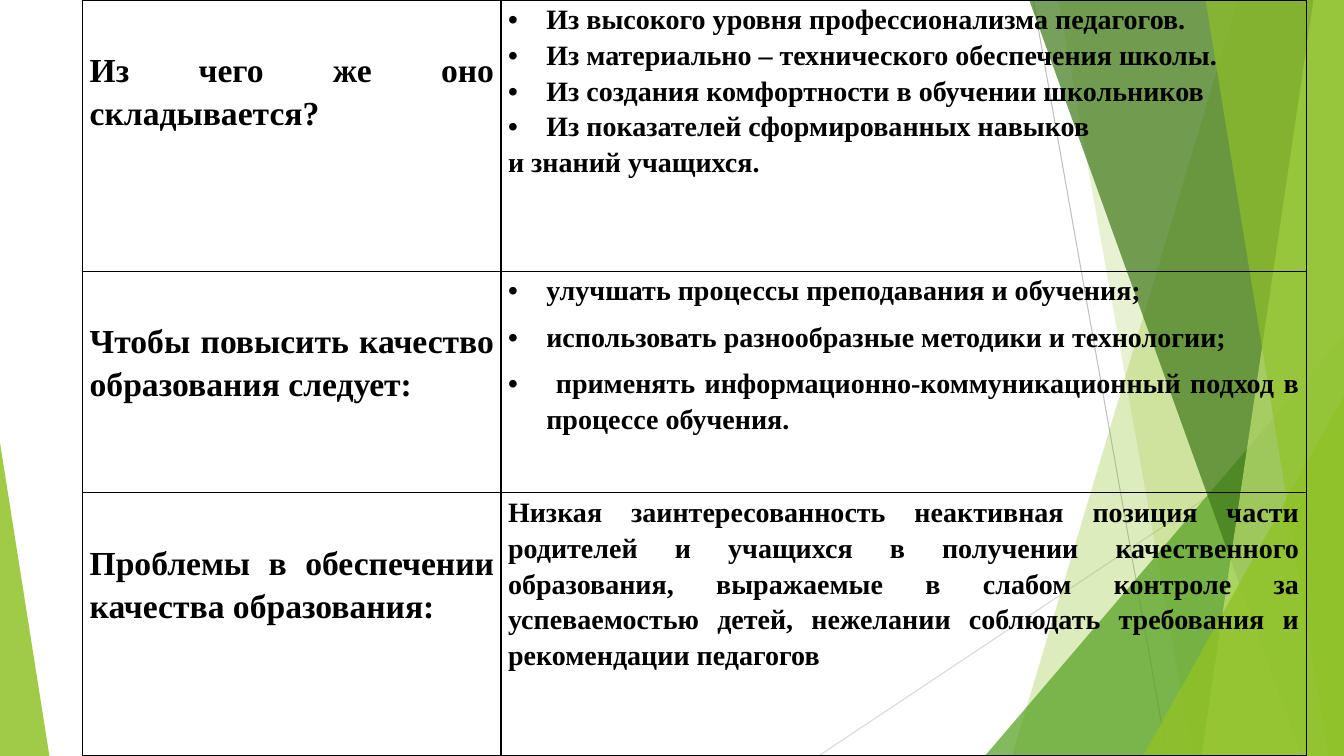
"""Build a slide with a three-row table on school education quality over a faceted green backdrop."""
import dataclasses

import pptx
import pptx.dml.color
import pptx.enum.dml
import pptx.enum.shapes
import pptx.enum.text
import pptx.oxml
import pptx.oxml.ns
import pptx.util

WIDTH = pptx.util.Inches(13.333)
HEIGHT = pptx.util.Inches(7.5)
JUSTIFY = pptx.enum.text.PP_ALIGN.JUSTIFY
LEFT = pptx.enum.text.PP_ALIGN.LEFT


@dataclasses.dataclass(frozen=True)
class Theme:
    """Colours, font and type sizes of the slide."""
    font: str = "Times New Roman"
    text: str = "000000"
    question_size: int = 24
    answer_size: int = 20
    lime: str = "90C226"
    pale: str = "C0E474"
    green: str = "54A021"
    dark: str = "3F7819"
    rule_dark: str = "BFBFBF"
    rule_light: str = "D9D9D9"
    rule_width: float = 0.75
    border_width: float = 1


THEME = Theme()

RULES = [
    ((76.88, 0), (86.85, 100), THEME.rule_dark),
    ((100, 53.73), (60.9, 100), THEME.rule_light),
]
COLUMNS = (31.13, 59.92)
ROWS = (35.87, 29.33, 34.8)
TABLE_LEFT = 6.15

QUESTIONS = [
    "Из чего же оно складывается?",
    "Чтобы повысить качество образования следует:",
    "Проблемы в обеспечении качества образования:",
]
COMPONENTS = [
    "Из высокого уровня профессионализма педагогов.",
    "Из материально – технического обеспечения школы.",
    "Из создания комфортности в обучении школьников",
    "Из показателей сформированных навыков",
]
MEASURES = [
    "улучшать процессы преподавания и обучения;",
    "использовать разнообразные методики и технологии;",
    " применять информационно-коммуникационный подход в процессе обучения.",
]
PROBLEM = (
    "Низкая заинтересованность неактивная позиция части родителей и учащихся "
    "в получении качественного образования, выражаемые в слабом контроле за "
    "успеваемостью детей, нежелании соблюдать требования и рекомендации педагогов"
)


def across(percent):
    """Turn a percentage of the slide width into a length."""
    return round(WIDTH * percent / 100)


def down(percent):
    """Turn a percentage of the slide height into a length."""
    return round(HEIGHT * percent / 100)


def apply_format(target, values):
    """Set each attribute of the target from a dict of format values."""
    for name, value in values.items():
        setattr(target, name, value)


def colour(code):
    """Make a colour from its hexadecimal code."""
    return pptx.dml.color.RGBColor.from_string(code)


def xml_element(markup):
    """Parse drawing markup that uses the a: prefix."""
    namespace = pptx.oxml.ns.nsdecls("a")
    return pptx.oxml.parse_xml(markup.replace(" ", f" {namespace} ", 1))


def add_rule(slide, start, end, code):
    """Draw a thin backdrop line between two points."""
    line = slide.shapes.add_connector(
        pptx.enum.shapes.MSO_CONNECTOR.STRAIGHT,
        across(start[0]), down(start[1]), across(end[0]), down(end[1]))
    line.line.color.rgb = colour(code)
    line.line.width = pptx.util.Pt(THEME.rule_width)
    line._element.spPr.append(xml_element("<a:effectLst />"))


def paint(shape, code, opacity):
    """Fill a backdrop shape with a translucent colour and no outline."""
    shape.shadow.inherit = False
    shape.fill.solid()
    shape.fill.fore_color.rgb = colour(code)
    shape.line.fill.background()
    fill = shape._element.spPr.find(pptx.oxml.ns.qn("a:solidFill"))
    fill[0].append(xml_element(f'<a:alpha val="{opacity * 1000}"/>'))


def add_facet(slide, top, bottom, code, opacity):
    """Draw a band from a slanted left edge to the right edge of the slide."""
    builder = slide.shapes.build_freeform(across(top), 0)
    builder.add_line_segments(
        [(WIDTH, 0), (WIDTH, HEIGHT), (across(bottom), HEIGHT)], close=True)
    paint(builder.convert_to_shape(), code, opacity)


def add_corner(slide, left, top, width, apex, code, opacity):
    """Draw a right triangle standing on the bottom edge of the slide."""
    corner = slide.shapes.add_shape(
        pptx.enum.shapes.MSO_SHAPE.ISOSCELES_TRIANGLE,
        across(left), down(top), across(width), down(100 - top))
    corner.adjustments[0] = apex
    paint(corner, code, opacity)


def add_backdrop(slide):
    """Draw the backdrop from back to front."""
    for rule in RULES:
        add_rule(slide, *rule)
    add_facet(slide, 92.1, 75.3, THEME.lime, 30)
    add_facet(slide, 78.75, 88.73, THEME.lime, 20)
    add_corner(slide, 73.28, 44.4, 26.72, 1, THEME.green, 72)
    add_facet(slide, 76.58, 96.83, THEME.dark, 70)
    add_facet(slide, 97.73, 89.4, THEME.pale, 70)
    add_facet(slide, 89.7, 98.85, THEME.lime, 65)
    add_corner(slide, 85.05, 52.4, 14.95, 1, THEME.lime, 80)
    add_corner(slide, 0, 58.53, 3.68, 0, THEME.lime, 85)


def add_bullet(paragraph):
    """Give a paragraph a hanging round bullet."""
    indent = pptx.util.Inches(0.38)
    properties = paragraph._p.get_or_add_pPr()
    properties.set("marL", str(indent))
    properties.set("indent", str(-indent))
    properties.append(xml_element('<a:buFont typeface="Arial"/>'))
    properties.append(xml_element('<a:buChar char="•"/>'))


def frame_cell(cell, top_margin):
    """Set the borders, margins and empty fill of a cell."""
    width = pptx.util.Pt(THEME.border_width)
    properties = cell._tc.get_or_add_tcPr()
    for side in "LRTB":
        properties.append(xml_element(
            f'<a:ln{side} w="{width}"><a:solidFill><a:srgbClr val="{THEME.text}"/>'
            f"</a:solidFill></a:ln{side}>"))
    cell.fill.background()
    side_margin = pptx.util.Inches(0.07)
    apply_format(cell, {
        "margin_left": side_margin, "margin_right": side_margin,
        "margin_top": top_margin, "margin_bottom": 0,
        "vertical_anchor": pptx.enum.text.MSO_ANCHOR.TOP})


def write_cell(cell, texts, size, bullets=0, alignment=JUSTIFY, gap=7.5, top_margin=0):
    """Write paragraphs into a cell, with bullets on the first ones."""
    frame_cell(cell, top_margin)
    for index, text in enumerate(texts):
        frame = cell.text_frame
        paragraph = frame.add_paragraph() if index else frame.paragraphs[0]
        apply_format(paragraph, {
            "alignment": alignment, "line_spacing": 1.15,
            "space_after": pptx.util.Pt(gap)})
        if index < bullets:
            add_bullet(paragraph)
        run = paragraph.add_run()
        run.text = text
        apply_format(run.font, {
            "name": THEME.font, "size": pptx.util.Pt(size), "bold": True})
        run.font.color.rgb = colour(THEME.text)


def add_quality_table(slide):
    """Add the table of questions and answers."""
    table = slide.shapes.add_table(
        len(ROWS), len(COLUMNS), across(TABLE_LEFT), 0,
        across(sum(COLUMNS)), HEIGHT).table
    apply_format(table, {"first_row": False, "horz_banding": False})
    for column, share in zip(table.columns, COLUMNS):
        column.width = across(share)
    for row, share in zip(table.rows, ROWS):
        row.height = down(share)
    for index, question in enumerate(QUESTIONS):
        write_cell(table.cell(index, 0), [question], THEME.question_size,
                   top_margin=pptx.util.Inches(0.47))
    size = THEME.answer_size
    write_cell(table.cell(0, 1), COMPONENTS + ["и знаний учащихся."], size,
               bullets=len(COMPONENTS), alignment=LEFT, gap=0)
    write_cell(table.cell(1, 1), MEASURES, size, bullets=len(MEASURES))
    write_cell(table.cell(2, 1), [PROBLEM], size)


def main():
    """Build and save the presentation."""
    presentation = pptx.Presentation()
    apply_format(presentation, {"slide_width": WIDTH, "slide_height": HEIGHT})
    slide = presentation.slides.add_slide(presentation.slide_layouts[6])
    add_backdrop(slide)
    add_quality_table(slide)
    presentation.save("out.pptx")


if __name__ == "__main__":
    main()
